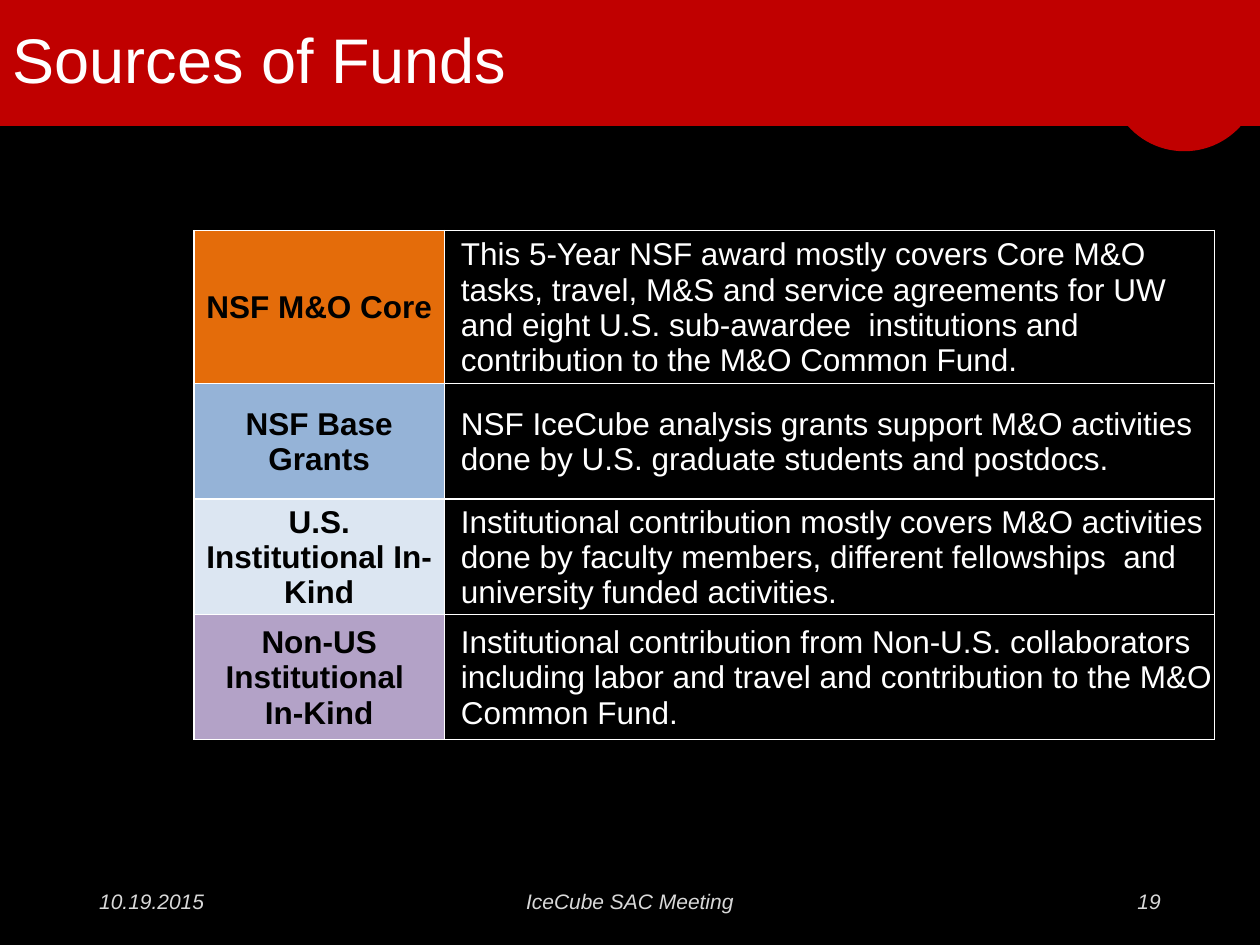
from dataclasses import dataclass
from typing import Optional

from lxml.etree import SubElement
from pptx import Presentation
from pptx.dml.color import RGBColor
from pptx.enum.shapes import MSO_SHAPE
from pptx.enum.text import MSO_ANCHOR, MSO_AUTO_SIZE, PP_ALIGN
from pptx.oxml.ns import qn
from pptx.util import Cm, Pt


@dataclass(frozen=True)
class Theme:
    """Colours, font and type sizes of the slide."""
    font: str = "Arial"
    background: str = "000000"
    banner: str = "C00000"
    light: str = "FFFFFF"
    dark: str = "000000"
    footer: str = "D9D9D9"
    title_size: int = 36
    table_size: int = 18
    footer_size: int = 12


@dataclass(frozen=True)
class Source:
    """One source of funds and the look of its row."""
    label: str
    description: str
    colour: str
    height: float


@dataclass(frozen=True)
class FooterItem:
    """One text in the footer line."""
    text: str
    left: float
    width: float
    alignment: PP_ALIGN


THEME = Theme()
SOURCES = [
    Source("NSF M&O Core",
           "This 5-Year NSF award mostly covers Core M&O tasks, travel, M&S and service "
           "agreements for UW and eight U.S. sub-awardee  institutions and contribution "
           "to the M&O Common Fund.", "E46C0A", 2.74),
    Source("NSF Base Grants",
           "NSF IceCube analysis grants support M&O activities done by U.S. graduate "
           "students and postdocs.", "95B3D7", 2.33),
    Source("U.S. Institutional In-Kind",
           "Institutional contribution mostly covers M&O activities done by faculty "
           "members, different fellowships  and university funded activities.",
           "DCE6F2", 2.33),
    Source("Non-US Institutional \nIn-Kind",
           "Institutional contribution from Non-U.S. collaborators including labor and "
           "travel and contribution to the M&O Common Fund.", "B3A2C7", 2.52),
]
FOOTER = [
    FooterItem("10.19.2015", 1.75, 5.72, PP_ALIGN.LEFT),
    FooterItem("IceCube SAC Meeting", 8.41, 8.58, PP_ALIGN.CENTER),
    FooterItem("19", 17.93, 5.72, PP_ALIGN.RIGHT),
]


def paint(target, colour: str) -> None:
    """Fill a shape, cell or background with one colour."""
    target.fill.solid()
    target.fill.fore_color.rgb = RGBColor.from_string(colour)


def style_text(frame, size: int, colour: str, alignment: PP_ALIGN,
               bold: bool = False, italic: bool = False) -> None:
    """Format every paragraph of a text frame alike."""
    for paragraph in frame.paragraphs:
        paragraph.alignment = alignment
        font = paragraph.font
        font.name, font.size = THEME.font, Pt(size)
        font.bold, font.italic = bold, italic
        font.color.rgb = RGBColor.from_string(colour)


def add_banner(page) -> None:
    """Draw the banner's right end with its round bulge, and the title."""
    for kind, left, width, height in ((MSO_SHAPE.RECTANGLE, 21.59, 3.81, 2.54),
                                      (MSO_SHAPE.OVAL, 22.35, 3.05, 3.05)):
        shape = page.shapes.add_shape(kind, Cm(left), Cm(0), Cm(width), Cm(height))
        shape.shadow.inherit = False
        paint(shape, THEME.banner)
        shape.line.fill.background()
    title = page.shapes.title
    title.left, title.top, title.width, title.height = Cm(0), Cm(0), Cm(21.59), Cm(2.54)
    paint(title, THEME.banner)
    frame = title.text_frame
    frame.text = "Sources of Funds"
    frame.auto_size = MSO_AUTO_SIZE.NONE
    frame.vertical_anchor = MSO_ANCHOR.MIDDLE
    frame.paragraphs[0].line_spacing = 0.9
    style_text(frame, THEME.title_size, THEME.light, PP_ALIGN.LEFT)


def add_footer_item(page, item: FooterItem) -> None:
    """Write one footer text."""
    box = page.shapes.add_textbox(Cm(item.left), Cm(17.65), Cm(item.width), Cm(1.02))
    frame = box.text_frame
    frame.word_wrap = True
    frame.vertical_anchor = MSO_ANCHOR.MIDDLE
    frame.text = item.text
    style_text(frame, THEME.footer_size, THEME.footer, item.alignment, italic=True)


def fill_cell(cell, text: str, colour: str, alignment: PP_ALIGN,
              bold: bool = False, fill: Optional[str] = None) -> None:
    """Write one table cell with its borders and fill."""
    cell.text = text
    cell.vertical_anchor = MSO_ANCHOR.MIDDLE
    cell.margin_left = cell.margin_right = cell.margin_top = Cm(0.03)
    cell.margin_bottom = Cm(0)
    properties = cell._tc.get_or_add_tcPr()
    for side in ("lnL", "lnR", "lnT", "lnB"):
        line = SubElement(properties, qn(f"a:{side}"), w=str(Pt(1)))
        SubElement(SubElement(line, qn("a:solidFill")), qn("a:srgbClr"), val=THEME.light)
    if fill:
        paint(cell, fill)
    else:
        cell.fill.background()
    style_text(cell.text_frame, THEME.table_size, colour, alignment, bold)


def add_sources_table(page) -> None:
    """Build the table of funding sources."""
    height = sum(source.height for source in SOURCES)
    table = page.shapes.add_table(len(SOURCES), 2, Cm(3.91), Cm(4.65),
                                  Cm(20.57), Cm(height)).table
    table.first_row = table.horz_banding = False
    table.columns[0].width, table.columns[1].width = Cm(5.05), Cm(15.52)
    for row, source in zip(table.rows, SOURCES):
        row.height = Cm(source.height)
        label, description = row.cells
        fill_cell(label, source.label, THEME.dark, PP_ALIGN.CENTER, True, source.colour)
        fill_cell(description, source.description, THEME.light, PP_ALIGN.LEFT)
        indent = description.text_frame.paragraphs[0]._p.get_or_add_pPr()
        indent.set("marL", str(Cm(0.3)))


def main() -> None:
    """Build and save the slide."""
    deck = Presentation()
    deck.slide_width, deck.slide_height = Cm(25.4), Cm(19.05)
    page = deck.slides.add_slide(deck.slide_layouts[5])
    paint(page.background, THEME.background)
    add_banner(page)
    for item in FOOTER:
        add_footer_item(page, item)
    add_sources_table(page)
    deck.save("out.pptx")


if __name__ == "__main__":
    main()
